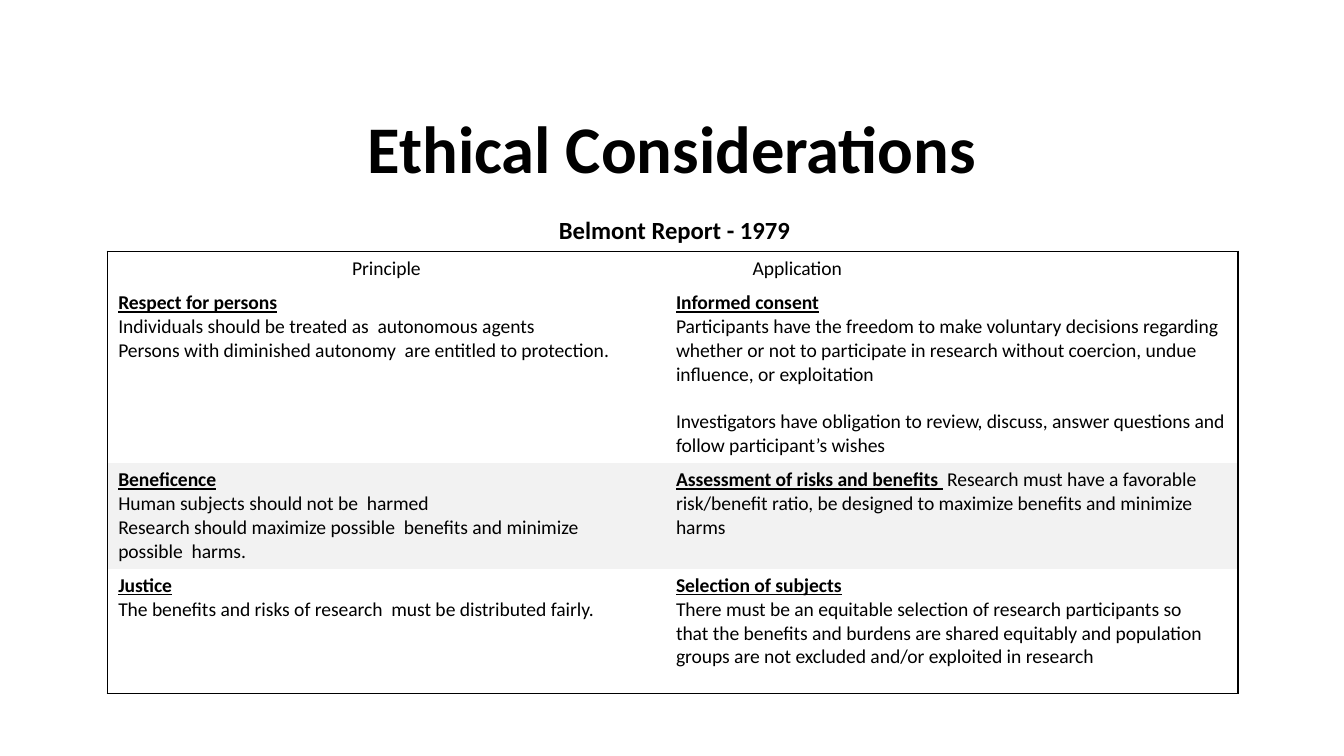
from lxml import etree
from pptx import Presentation
from pptx.dml.color import RGBColor
from pptx.enum.text import MSO_ANCHOR, PP_ALIGN
from pptx.oxml.ns import qn
from pptx.util import Inches, Pt

CENTER = PP_ALIGN.CENTER
LEFT = PP_ALIGN.LEFT
MIDDLE = MSO_ANCHOR.MIDDLE

FONT = "Calibri"
BLACK = "000000"
BAND = "F2F2F2"
BODY_SIZE = 10.5

TITLE = "Ethical Considerations"
REPORT = "Belmont Report - 1979"
HEADERS = [("Principle", CENTER, 0), ("Application", LEFT, 0.65)]
PRINCIPLES = [
    (
        {"heading": "Respect for persons",
         "body": ["Individuals should be treated as  autonomous agents",
                  "Persons with diminished autonomy  are entitled to protection."]},
        {"heading": "Informed consent", "gap": 12.7,
         "body": ["Participants have the freedom to make voluntary decisions regarding "
                  "whether or not to participate in research without coercion, undue "
                  "influence, or exploitation",
                  "Investigators have obligation to review, discuss, answer questions "
                  "and follow participant’s wishes"]},
    ),
    (
        {"heading": "Beneficence", "right": 0.2,
         "body": ["Human subjects should not be  harmed",
                  "Research should maximize possible  benefits and minimize possible  harms."]},
        {"heading": "Assessment of risks and benefits ", "run_in": True,
         "body": [" Research must have a favorable risk/benefit ratio, be designed to "
                  "maximize benefits and minimize harms"]},
    ),
    (
        {"heading": "Justice",
         "body": ["The benefits and risks of research  must be distributed fairly."]},
        {"heading": "Selection of subjects", "right": 0.2,
         "body": ["There must be an equitable selection of research participants so that "
                  "the benefits and burdens are shared equitably and population groups "
                  "are not excluded and/or exploited in research"]},
    ),
]
COLUMN_WIDTHS = [4.15, 4.26]
ROW_HEIGHTS = [0.24, 1.27, 0.65, 0.93]


def color(hex_string):
    return RGBColor.from_string(hex_string)


def style(paragraph, size, bold=False, align=LEFT):
    paragraph.alignment = align
    paragraph.font.name = FONT
    paragraph.font.size = Pt(size)
    paragraph.font.bold = bold
    paragraph.font.color.rgb = color(BLACK)


def add_run(paragraph, text, emphasis=False):
    run = paragraph.add_run()
    run.text = text
    run.font.bold = emphasis
    run.font.underline = emphasis


def set_borders(cell, visible):
    properties = cell._tc.get_or_add_tcPr()
    for side in "LRTB":
        line = etree.SubElement(properties, qn(f"a:ln{side}"), w=str(Pt(1)))
        if side in visible:
            fill = etree.SubElement(line, qn("a:solidFill"))
            etree.SubElement(fill, qn("a:srgbClr"), val=BLACK)
        else:
            etree.SubElement(line, qn("a:noFill"))


def write_entry(cell, entry):
    cell.margin_left = Inches(0.08)
    cell.margin_right = Inches(entry.get("right", 0))
    paragraph = cell.text_frame.paragraphs[0]
    style(paragraph, BODY_SIZE)
    add_run(paragraph, entry["heading"], emphasis=True)
    for index, text in enumerate(entry["body"]):
        if not entry.get("run_in"):
            paragraph = cell.text_frame.add_paragraph()
            style(paragraph, BODY_SIZE)
            if index:
                paragraph.space_before = Pt(entry.get("gap", 0))
        add_run(paragraph, text)


prs = Presentation()
prs.slide_width = Inches(10)
prs.slide_height = Inches(10 * 9 / 16)
slide = prs.slides.add_slide(prs.slide_layouts[5])

title = slide.shapes.title
title.left, title.top = Inches(0.5), Inches(0.78)
title.width, title.height = Inches(9), Inches(0.7)
title.text_frame.text = TITLE
title.text_frame.vertical_anchor = MIDDLE
title.text_frame.margin_top = title.text_frame.margin_bottom = Inches(0.03)
style(title.text_frame.paragraphs[0], 35.7, True, CENTER)
title.text_frame.paragraphs[0].line_spacing = 0.9

table = slide.shapes.add_table(
    len(ROW_HEIGHTS), len(COLUMN_WIDTHS), Inches(0.8), Inches(1.87),
    Inches(sum(COLUMN_WIDTHS)), Inches(sum(ROW_HEIGHTS))).table
table.first_row = table.horz_banding = False
for column, width in zip(table.columns, COLUMN_WIDTHS):
    column.width = Inches(width)
for row, height in zip(table.rows, ROW_HEIGHTS):
    row.height = Inches(height)

last_row = len(ROW_HEIGHTS) - 1
for r in range(len(ROW_HEIGHTS)):
    for c in range(len(COLUMN_WIDTHS)):
        cell = table.cell(r, c)
        cell.margin_top = cell.margin_bottom = Inches(0.04)
        set_borders(cell, "LR"[c] + ("T" if r == 0 else "B" if r == last_row else ""))
        if r == 2:
            cell.fill.solid()
            cell.fill.fore_color.rgb = color(BAND)
        else:
            cell.fill.background()
        if r == 0:
            text, align, indent = HEADERS[c]
            cell.margin_left = Inches(indent)
            cell.margin_right = 0
            cell.text_frame.text = text
            style(cell.text_frame.paragraphs[0], BODY_SIZE, align=align)
        else:
            write_entry(cell, PRINCIPLES[r - 1][c])

report = slide.shapes.add_textbox(Inches(4.06), Inches(1.55), Inches(1.99), Inches(0.32))
report.text_frame.word_wrap = False
report.text_frame.text = REPORT
style(report.text_frame.paragraphs[0], 13.2, True)

prs.save("out.pptx")
